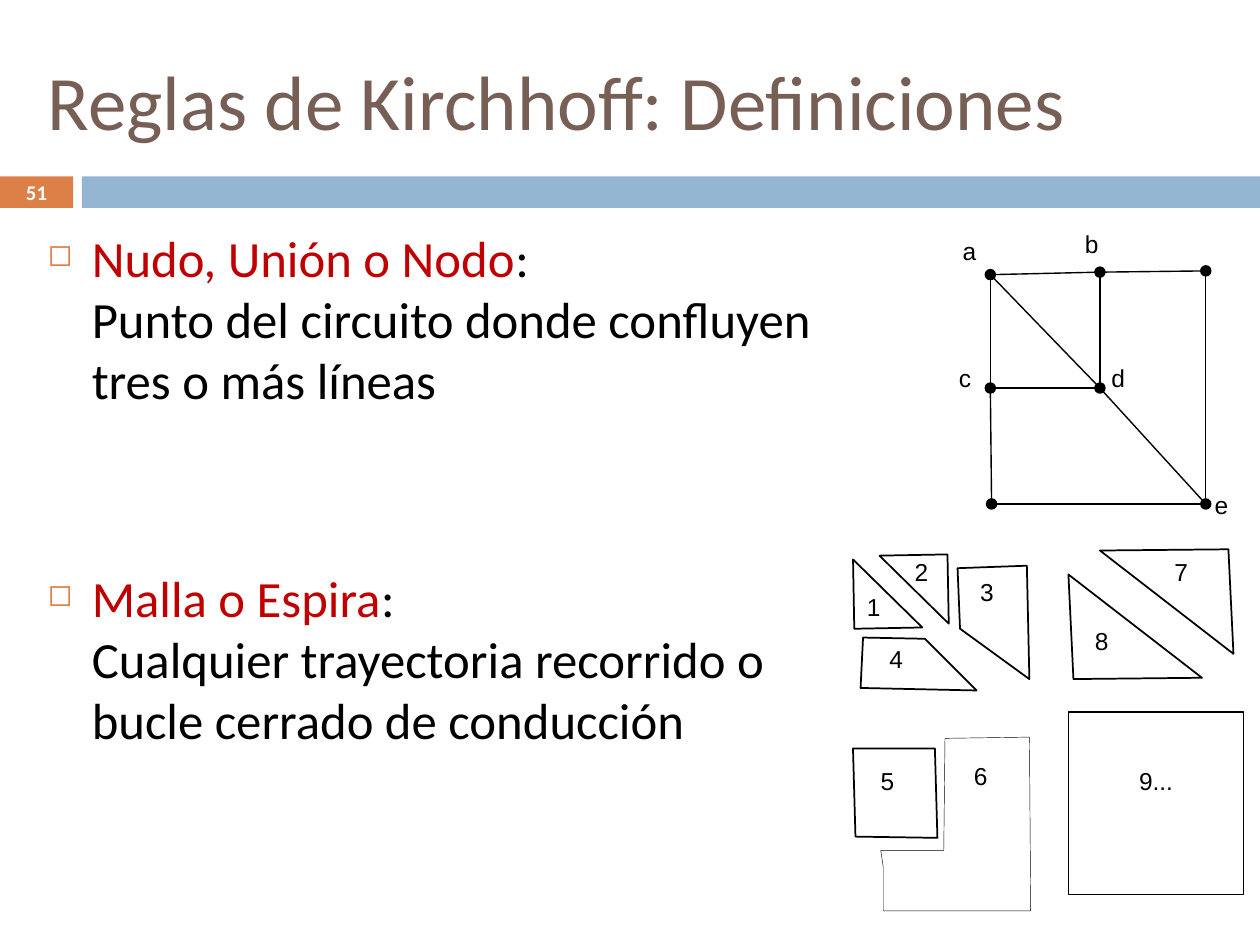
"""Build the slide that defines nodes and meshes for Kirchhoff's rules."""
from typing import NamedTuple

from lxml import etree
from pptx import Presentation
from pptx.dml.color import RGBColor
from pptx.enum import shapes, text
from pptx.oxml.ns import qn
from pptx.util import Inches, Pt

BLACK, WHITE, RED = "000000", "FFFFFF", "C00000"
ORANGE, BLUE, BROWN = "DD8047", "94B6D2", "775F55"
DOT = 0.07


class Node(NamedTuple):
    x: float
    y: float


class Label(NamedTuple):
    text: str
    x: float
    y: float


class Mesh(NamedTuple):
    label: Label
    points: list[tuple[float, float]]
    width: float = 1


class Definition(NamedTuple):
    term: str
    meaning: str
    space_before: float


NODES = {
    "a": Node(7.86, 2.18), "b": Node(8.73, 2.16), "top right": Node(9.57, 2.15),
    "c": Node(7.86, 3.08), "d": Node(8.73, 3.08),
    "bottom left": Node(7.87, 4), "e": Node(9.57, 4),
}
WIRES = [
    ("a", "b"), ("b", "top right"), ("top right", "e"), ("a", "c"), ("c", "bottom left"),
    ("bottom left", "e"), ("b", "d"), ("c", "d"), ("a", "d"), ("d", "e"),
]
NODE_LABELS = [
    Label("a", 7.64, 1.87), Label("b", 8.61, 1.82), Label("c", 7.61, 2.88),
    Label("d", 8.82, 2.88), Label("e", 9.64, 3.89),
]
MESHES = [
    Mesh(Label("1", 6.88, 4.7), [(6.78, 4.99), (6.77, 4.44), (7.32, 4.98)]),
    Mesh(Label("2", 7.26, 4.42), [(7.52, 4.4), (7.53, 4.95), (6.98, 4.41)]),
    Mesh(Label("3", 7.78, 4.58), [(7.62, 4.99), (7.6, 4.51), (8.15, 4.49), (8.17, 5.39)]),
    Mesh(Label("4", 7.06, 5.11), [(6.85, 5.06), (7.34, 5.07), (7.75, 5.48), (6.83, 5.46)]),
    Mesh(Label("5", 6.99, 6.08), [(6.77, 5.94), (7.42, 5.94), (7.44, 6.65), (6.79, 6.64)]),
    Mesh(Label("6", 7.73, 6.04), [(7.49, 6.75), (6.99, 6.75), (7.01, 6.88), (7.01, 7.23),
                                  (8.18, 7.23), (8.17, 5.85), (7.5, 5.86)], 0.25),
    Mesh(Label("7", 9.32, 4.42), [(8.73, 4.37), (9.79, 5.19), (9.75, 4.36)]),
    Mesh(Label("8", 8.69, 4.97), [(9.54, 5.38), (8.48, 4.56), (8.52, 5.39)]),
]
DEFINITIONS = [
    Definition("Nudo, Unión o Nodo",
               "Punto del circuito donde confluyen tres o más líneas", 7),
    Definition("Malla o Espira",
               "Cualquier trayectoria recorrido o bucle cerrado de conducción", 90),
]


def rgb(value: str) -> RGBColor:
    return RGBColor.from_string(value)


def write(p, words: str, size: float, color: str = BLACK, font: str = "Calibri",
          bold: bool = False, align=text.PP_ALIGN.LEFT) -> None:
    p.alignment = align
    r = p.add_run()
    r.text = words
    r.font.size, r.font.name, r.font.bold = Pt(size), font, bold
    r.font.color.rgb = rgb(color)


def add_box(s, x: float, y: float, w: float, h: float, wrap: bool = True):
    tf = s.shapes.add_textbox(Inches(x), Inches(y), Inches(w), Inches(h)).text_frame
    tf.word_wrap = wrap
    return tf


def add_label(s, label: Label) -> None:
    tf = add_box(s, label.x, label.y, 0.4, 0.24)
    tf.margin_left = tf.margin_top = tf.margin_right = tf.margin_bottom = 0
    write(tf.paragraphs[0], label.text, 14, font="Arial")


def outline(sp, width: float) -> None:
    sp.line.color.rgb = rgb(BLACK)
    sp.line.width = Pt(width)


def add_preset(s, kind, x: float, y: float, w: float, h: float, color: str | None = None):
    sp = s.shapes.add_shape(kind, Inches(x), Inches(y), Inches(w), Inches(h))
    sp.shadow.inherit = False
    if color:
        sp.fill.solid()
        sp.fill.fore_color.rgb = rgb(color)
    else:
        sp.fill.background()
    sp.line.fill.background()
    return sp


def add_wire(s, start: Node, end: Node) -> None:
    wire = s.shapes.add_connector(shapes.MSO_CONNECTOR.STRAIGHT, *map(Inches, start + end))
    outline(wire, 0.79)
    etree.SubElement(wire._element.spPr, qn("a:effectLst"))


def add_node(s, node: Node) -> None:
    sp = add_preset(s, shapes.MSO_SHAPE.OVAL, node.x - DOT / 2, node.y - DOT / 2,
                    DOT, DOT, BLACK)
    outline(sp, 1.5)


def add_mesh(s, mesh: Mesh) -> None:
    start, *rest = [(Inches(x), Inches(y)) for x, y in mesh.points]
    builder = s.shapes.build_freeform(*start)
    builder.add_line_segments(rest, close=True)
    sp = builder.convert_to_shape()
    sp.shadow.inherit = False
    sp.fill.background()
    outline(sp, mesh.width)
    add_label(s, mesh.label)


def add_bullet(p, char: str, color: str, percent: int, indent: float) -> None:
    pPr = p._p.get_or_add_pPr()
    pPr.set("marL", str(Inches(indent)))
    pPr.set("indent", str(-Inches(indent)))
    etree.SubElement(etree.SubElement(pPr, qn("a:buClr")), qn("a:srgbClr"), val=color)
    etree.SubElement(pPr, qn("a:buSzPct"), val=str(percent * 1000))
    etree.SubElement(pPr, qn("a:buChar"), char=char)


def add_definition(p, item: Definition) -> None:
    p.space_before = Pt(item.space_before)
    add_bullet(p, "◻", ORANGE, 60, 0.35)
    write(p, item.term, 29, RED)
    write(p, ":", 29)
    p.add_line_break()
    write(p, item.meaning, 29)


def main() -> None:
    prs = Presentation()
    prs.slide_width, prs.slide_height = Inches(10), Inches(7.5)
    s = prs.slides.add_slide(prs.slide_layouts[5])

    add_preset(s, shapes.MSO_SHAPE.RECTANGLE, 0, 1.4, 0.58, 0.25, ORANGE)
    add_preset(s, shapes.MSO_SHAPE.RECTANGLE, 0.65, 1.4, 9.35, 0.25, BLUE)

    title = s.shapes.title
    title.left, title.top, title.width, title.height = map(Inches, (0.28, 0.25, 9.45, 1.08))
    title.text_frame.vertical_anchor = text.MSO_ANCHOR.MIDDLE
    write(title.text_frame.paragraphs[0], "Reglas de Kirchhoff: Definiciones", 44, BROWN)

    tf = add_box(s, 0, 1.39, 0.58, 0.27)
    tf.vertical_anchor = text.MSO_ANCHOR.MIDDLE
    write(tf.paragraphs[0], "51", 11.9, WHITE, bold=True, align=text.PP_ALIGN.CENTER)

    tf = add_box(s, 0.28, 1.75, 6.71, 5.49)
    for i, item in enumerate(DEFINITIONS):
        add_definition(tf.add_paragraph() if i else tf.paragraphs[0], item)

    for start, end in WIRES:
        add_wire(s, NODES[start], NODES[end])
    for node in NODES.values():
        add_node(s, node)
    for label in NODE_LABELS:
        add_label(s, label)
    for mesh in MESHES:
        add_mesh(s, mesh)
    outline(add_preset(s, shapes.MSO_SHAPE.RECTANGLE, 8.48, 5.65, 1.39, 1.45), 1)
    add_label(s, Label("9...", 9.04, 6.08))

    prs.save("out.pptx")


if __name__ == "__main__":
    main()
